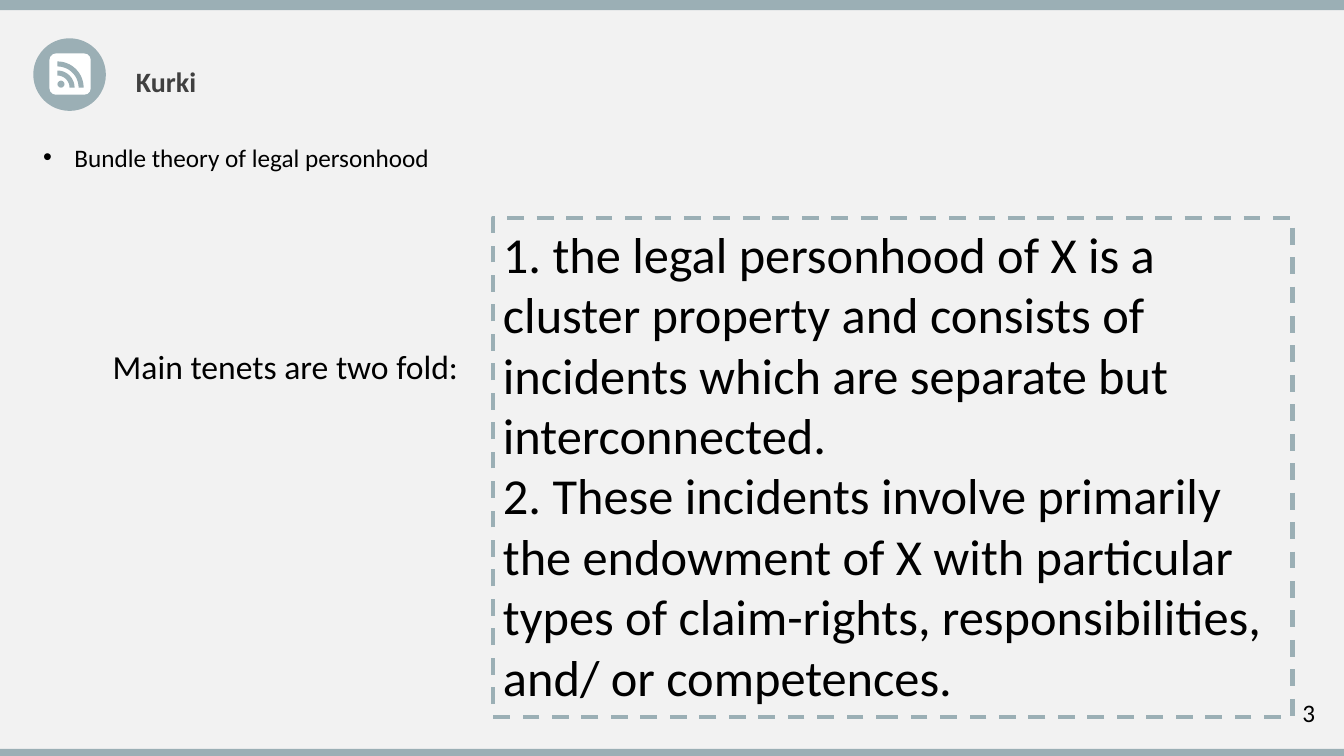
from dataclasses import dataclass
from math import cos, pi, sin

from lxml.etree import SubElement
from pptx import Presentation
from pptx.dml.color import RGBColor
from pptx.enum.dml import MSO_LINE
from pptx.enum.shapes import MSO_SHAPE
from pptx.enum.text import MSO_ANCHOR, PP_ALIGN
from pptx.oxml.ns import qn
from pptx.util import Inches, Pt

TITLE = "Kurki"
THEORY = "Bundle theory of legal personhood"
LEAD = "Main tenets are two fold:"
TENETS = [
    "1. the legal personhood of X is a cluster property and consists of "
    "incidents which are separate but interconnected.",
    "2. These incidents involve primarily the endowment of X with particular "
    "types of claim-rights, responsibilities, and/ or competences.",
]
PAGE_NUMBER = "3"

WIDTH, HEIGHT = 13.33, 7.5
BARS = [(0, 0.1), (7.43, 0.07)]  # top, height
FEED_CORNER = (0.57, 0.87)
FEED_WAVES = [(0.12, 0.17), (0.21, 0.26)]  # inner and outer radius
FEED_DOT = 0.07


@dataclass(frozen=True)
class Theme:
    font: str = "Calibri"
    background: str = "F2F2F2"
    accent: str = "9BAFB5"
    heading: str = "404040"
    text: str = "000000"
    white: str = "FFFFFF"
    title_size: int = 20
    small_size: int = 18
    lead_size: int = 24
    tenet_size: int = 36


THEME = Theme()


def color(name):
    return RGBColor.from_string(name)


def paint(shape, fill):
    shape.shadow.inherit = False
    shape.fill.solid()
    shape.fill.fore_color.rgb = color(fill)
    shape.line.fill.background()


def add_block(page, kind, left, top, width, height, fill):
    shape = page.shapes.add_shape(
        kind, Inches(left), Inches(top), Inches(width), Inches(height))
    paint(shape, fill)
    return shape


def write(box, lines, size, ink=THEME.text, bold=False, wrap=True,
          anchor=MSO_ANCHOR.TOP, bullet_indent=0):
    frame = box.text_frame
    frame.word_wrap = wrap
    frame.vertical_anchor = anchor
    for index, line in enumerate(lines):
        para = frame.paragraphs[0] if index == 0 else frame.add_paragraph()
        para.alignment = PP_ALIGN.LEFT
        span = para.add_run()
        span.text = line
        span.font.name = THEME.font
        span.font.size = Pt(size)
        span.font.bold = bold
        span.font.color.rgb = color(ink)
        if bullet_indent:
            properties = para._p.get_or_add_pPr()
            properties.set("marL", str(Inches(bullet_indent)))
            properties.set("indent", str(-Inches(bullet_indent)))
            SubElement(properties, qn("a:buFont")).set("typeface", "Arial")
            SubElement(properties, qn("a:buChar")).set("char", "•")


def add_text(page, left, top, width, height, text, size, **style):
    box = page.shapes.add_textbox(
        Inches(left), Inches(top), Inches(width), Inches(height))
    write(box, [text], size, **style)


def add_wave(page, inner, outer, steps=16):
    """Draw a quarter ring that opens up and right from the feed corner."""
    x, y = FEED_CORNER
    angles = [pi / 2 * step / steps for step in range(steps + 1)]
    ring = [(outer, angle) for angle in angles]
    ring += [(inner, angle) for angle in reversed(angles)]
    points = [(Inches(x + radius * cos(angle)), Inches(y - radius * sin(angle)))
              for radius, angle in ring]
    builder = page.shapes.build_freeform(*points[0])
    builder.add_line_segments(points[1:], close=True)
    paint(builder.convert_to_shape(), THEME.accent)


def add_feed_icon(page):
    add_block(page, MSO_SHAPE.OVAL, 0.33, 0.38, 0.72, 0.72, THEME.accent)
    tile = add_block(page, MSO_SHAPE.ROUNDED_RECTANGLE,
                     0.49, 0.53, 0.41, 0.41, THEME.white)
    tile.adjustments[0] = 0.16
    for inner, outer in FEED_WAVES:
        add_wave(page, inner, outer)
    x, y = FEED_CORNER
    add_block(page, MSO_SHAPE.OVAL, x, y - FEED_DOT, FEED_DOT, FEED_DOT,
              THEME.accent)


def add_tenets(page):
    box = add_block(page, MSO_SHAPE.RECTANGLE, 4.89, 2.16, 7.93, 4.95,
                    THEME.background)
    box.fill.background()
    box.line.color.rgb = color(THEME.accent)
    box.line.width = Pt(3)
    box.line.dash_style = MSO_LINE.DASH
    write(box, TENETS, THEME.tenet_size)


def main():
    deck = Presentation()
    deck.slide_width, deck.slide_height = Inches(WIDTH), Inches(HEIGHT)
    page = deck.slides.add_slide(deck.slide_layouts[6])
    page.background.fill.solid()
    page.background.fill.fore_color.rgb = color(THEME.background)

    for top, height in BARS:
        add_block(page, MSO_SHAPE.RECTANGLE, 0, top, WIDTH, height, THEME.accent)
    add_feed_icon(page)
    add_text(page, 1.25, 0.59, 4.37, 0.44, TITLE, THEME.title_size,
             ink=THEME.heading, bold=True, anchor=MSO_ANCHOR.MIDDLE)
    add_text(page, 0.33, 1.36, 12.75, 0.4, THEORY, THEME.small_size,
             bullet_indent=0.31)
    add_tenets(page)
    add_text(page, 1.02, 3.38, 3.7, 0.5, LEAD, THEME.lead_size)
    add_text(page, 12.82, 6.87, 0.34, 0.4, PAGE_NUMBER, THEME.small_size,
             wrap=False)
    deck.save("out.pptx")


if __name__ == "__main__":
    main()
